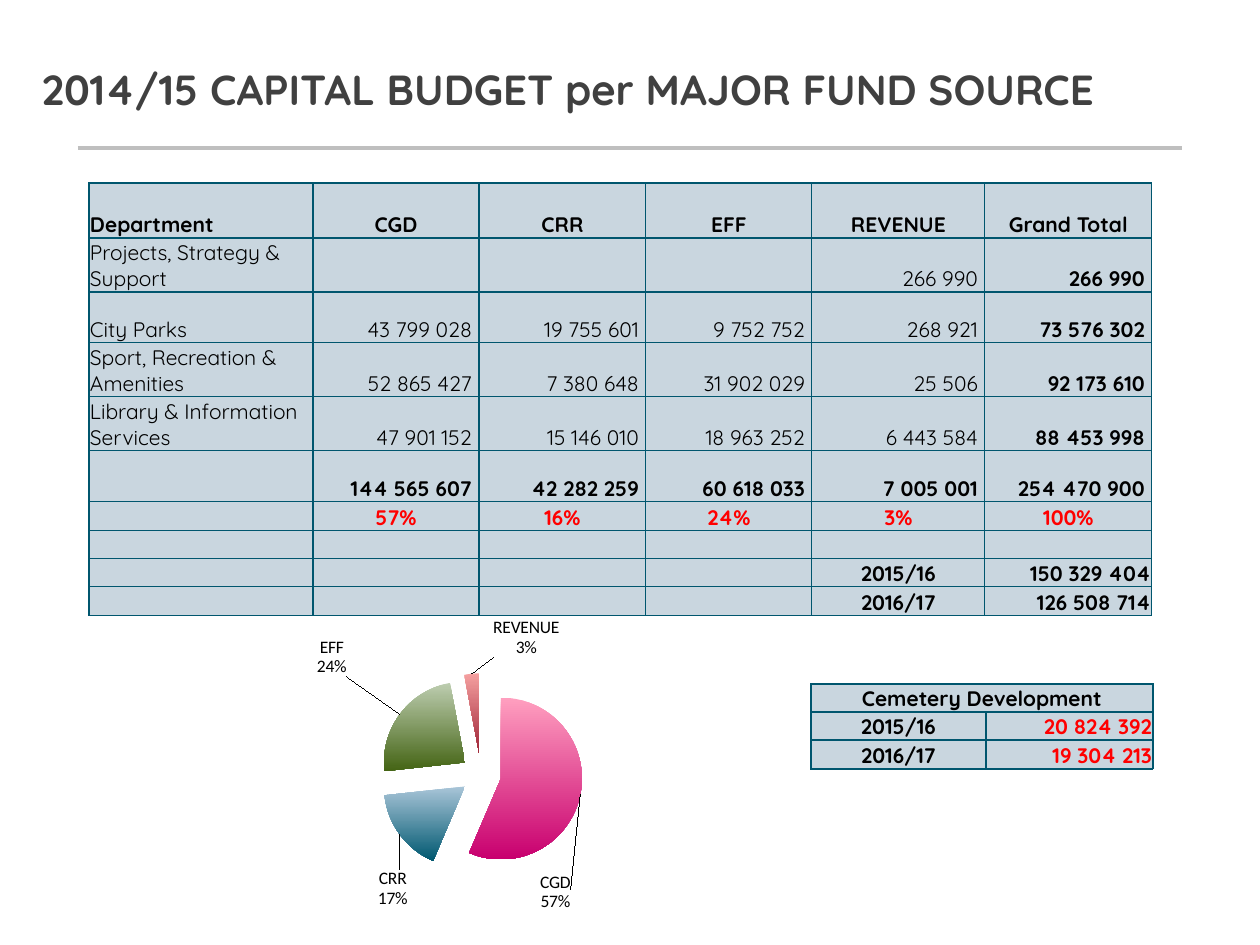
from pptx import Presentation
from pptx.chart.data import CategoryChartData
from pptx.dml.color import RGBColor
from pptx.enum.chart import XL_CHART_TYPE as CHART
from pptx.enum.shapes import MSO_CONNECTOR as CONN
from pptx.enum.text import MSO_ANCHOR as ANCHOR, MSO_AUTO_SIZE as FIT, PP_ALIGN as AL
from pptx.oxml import parse_xml
from pptx.oxml.ns import nsdecls, qn
from pptx.util import Emu, Pt

COLORS = {"title": "404040", "rule": "BFBFBF", "cell": "C9D6DF", "border": "00566E",
          "text": "000000", "accent": "FF0000"}
FONT = "Quicksand"

TITLE = "2014/15 CAPITAL BUDGET per MAJOR FUND SOURCE"
BUDGET = [
    ["Department", "CGD", "CRR", "EFF", "REVENUE", "Grand Total"],
    ["Projects, Strategy & Support", "", "", "", "266 990", "266 990"],
    ["City Parks", "43 799 028", "19 755 601", "9 752 752", "268 921", "73 576 302"],
    ["Sport, Recreation & Amenities", "52 865 427", "7 380 648", "31 902 029", "25 506",
     "92 173 610"],
    ["Library & Information Services", "47 901 152", "15 146 010", "18 963 252", "6 443 584",
     "88 453 998"],
    ["", "144 565 607", "42 282 259", "60 618 033", "7 005 001", "254 470 900"],
    ["", "57%", "16%", "24%", "3%", "100%"],
    ["", "", "", "", "", ""],
    ["", "", "", "", "2015/16", "150 329 404"],
    ["", "", "", "", "2016/17", "126 508 714"],
]
BUDGET_COLS = [224, 166, 167, 166, 173, 167]
BUDGET_ROWS = [55, 54, 51, 54, 54, 51, 29, 28, 28, 29]
TOTALS_ROW, SHARES_ROW = 5, 6

CEMETERY = [["Cemetery Development", ""], ["2015/16", "20 824 392"], ["2016/17", "19 304 213"]]
CEMETERY_COLS = [175, 167]
CEMETERY_ROWS = [28, 28, 29]

# fund, percent, gradient top, gradient bottom, label shift in px
FUNDS = [
    ("CGD", 57, "FF9FBF", "C8006F", (-45, 95)),
    ("CRR", 17, "A9C5D8", "005870", (14, 30)),
    ("EFF", 24, "BDCDB0", "446414", (-45, -32)),
    ("REVENUE", 3, "F5A0A0", "9D2235", (86, -9)),
]
CHART_BOX = (149, 610, 678, 302)
PIE_BOX = (230, 64, 202, 202)  # inside the chart


def px(n):
    return Emu(round(n * 914400 / 126))


def rgb(name):
    return RGBColor.from_string(COLORS[name])


def style_cell(cell, text, align, bold, color="text", right=1):
    cell.fill.solid()
    cell.fill.fore_color.rgb = rgb("cell")
    cell.vertical_anchor = ANCHOR.BOTTOM
    cell.margin_left = cell.margin_top = px(1)
    cell.margin_right, cell.margin_bottom = px(right), 0
    cell.text = text
    p = cell.text_frame.paragraphs[0]
    p.alignment = align
    f = p.font
    f.name, f.size, f.bold, f.color.rgb = FONT, Pt(12), bold, rgb(color)
    if not text:
        p._p.append(parse_xml(f'<a:endParaRPr {nsdecls("a")} sz="1200">'
                              f'<a:latin typeface="{FONT}"/></a:endParaRPr>'))
    tcPr = cell._tc.get_or_add_tcPr()
    for i, side in enumerate("LRTB"):
        tcPr.insert(i, parse_xml(
            f'<a:ln{side} {nsdecls("a")} w="9525"><a:solidFill>'
            f'<a:srgbClr val="{COLORS["border"]}"/></a:solidFill></a:ln{side}>'))


def add_grid(s, left, top, cols, rows):
    frame = s.shapes.add_table(len(rows), len(cols), px(left), px(top),
                               px(sum(cols)), px(sum(rows)))
    table = frame.table
    table.first_row = table.horz_banding = False
    for col, w in zip(table.columns, cols):
        col.width = px(w)
    for row, h in zip(table.rows, rows):
        row.height = px(h)
    return table


def add_budget(s):
    table = add_grid(s, 89, 183, BUDGET_COLS, BUDGET_ROWS)
    last = len(BUDGET_COLS) - 1
    for r, row in enumerate(BUDGET):
        for c, text in enumerate(row):
            if c == 0:
                align = AL.LEFT
            elif r in (0, SHARES_ROW) or (r > SHARES_ROW and c < last):
                align = AL.CENTER
            else:
                align = AL.RIGHT
            style_cell(table.cell(r, c), text, align,
                       bold=r == 0 or r >= TOTALS_ROW or c == last,
                       color="accent" if r == SHARES_ROW else "text",
                       right=7 if align == AL.RIGHT and r <= TOTALS_ROW else 1)


def add_cemetery(s):
    table = add_grid(s, 811, 684, CEMETERY_COLS, CEMETERY_ROWS)
    for r, row in enumerate(CEMETERY):
        for c, text in enumerate(row):
            style_cell(table.cell(r, c), text, AL.RIGHT if c else AL.CENTER, True,
                       "accent" if c else "text")
    table.cell(0, 0).merge(table.cell(0, 1))


def layout_xml(x, y, extra=""):
    return (f'<c:layout {nsdecls("c")}><c:manualLayout>{extra}'
            f'<c:x val="{x:.2f}"/><c:y val="{y:.2f}"/>')


def add_pie(s):
    data = CategoryChartData()
    data.categories = [fund[0] for fund in FUNDS]
    data.add_series("Series 1", [fund[1] for fund in FUNDS])
    chart = s.shapes.add_chart(CHART.PIE, *map(px, CHART_BOX), data).chart
    chart.has_legend = chart.has_title = False
    f = chart.font
    f.name, f.size, f.color.rgb = "Calibri", Pt(10), rgb("text")
    width, height = CHART_BOX[2:]

    series = chart.plots[0].series[0]
    shown = ('<c:showLegendKey val="0"/><c:showVal val="1"/><c:showCatName val="1"/>'
             '<c:showSerName val="0"/><c:showPercent val="0"/><c:showBubbleSize val="0"/>'
             '<c:separator>\n</c:separator>')
    style = '<c:numFmt formatCode="0&quot;%&quot;" sourceLinked="0"/>'
    place = '<c:dLblPos val="outEnd"/>'
    labels = ""
    for i, (_, _, top, bottom, (dx, dy)) in enumerate(FUNDS):
        fill = series.points[i].format.fill
        fill.gradient()
        fill.gradient_angle = 270
        for stop, color in zip(fill.gradient_stops, (top, bottom)):
            stop.color.rgb = RGBColor.from_string(color)
        labels += (f'<c:dLbl><c:idx val="{i}"/>{layout_xml(dx / width, dy / height)}'
                   f'</c:manualLayout></c:layout>{style}{place}{shown}</c:dLbl>')

    ser = series._element
    ser.find(qn("c:dPt")).addprevious(parse_xml(f'<c:explosion {nsdecls("c")} val="25"/>'))
    ser.find(qn("c:cat")).addprevious(parse_xml(
        f'<c:dLbls {nsdecls("c")}>{labels}{style}{place}{shown}'
        '<c:showLeaderLines val="1"/></c:dLbls>'))

    area = chart._chartSpace.chart.plotArea
    for old in area.findall(qn("c:layout")):
        area.remove(old)
    x, y, w, h = PIE_BOX
    modes = ('<c:layoutTarget val="inner"/><c:xMode val="edge"/><c:yMode val="edge"/>')
    area.insert(0, parse_xml(
        layout_xml(x / width, y / height, modes)
        + f'<c:w val="{w / width:.2f}"/><c:h val="{h / height:.2f}"/>'
        '</c:manualLayout></c:layout>'))


def add_title(s):
    title = s.shapes.title
    title.left, title.top, title.width, title.height = map(px, (29, 53, 1160, 71))
    tf = title.text_frame
    tf.text = TITLE
    tf.word_wrap, tf.auto_size, tf.vertical_anchor = True, FIT.NONE, ANCHOR.MIDDLE
    p = tf.paragraphs[0]
    p.alignment = AL.LEFT
    f = p.font
    f.name, f.size, f.bold, f.color.rgb = FONT, Pt(24), True, rgb("title")

    rule = s.shapes.add_connector(CONN.STRAIGHT, px(78), px(148), px(1182), px(148))
    rule.line.color.rgb, rule.line.width = rgb("rule"), Pt(2)
    rule._element.spPr.append(parse_xml(f'<a:effectLst {nsdecls("a")}/>'))


def main():
    prs = Presentation()
    prs.slide_width, prs.slide_height = px(1260), px(945)
    s = prs.slides.add_slide(prs.slide_layouts[5])
    add_title(s)
    add_budget(s)
    add_pie(s)
    add_cemetery(s)
    prs.save("out.pptx")


if __name__ == "__main__":
    main()
